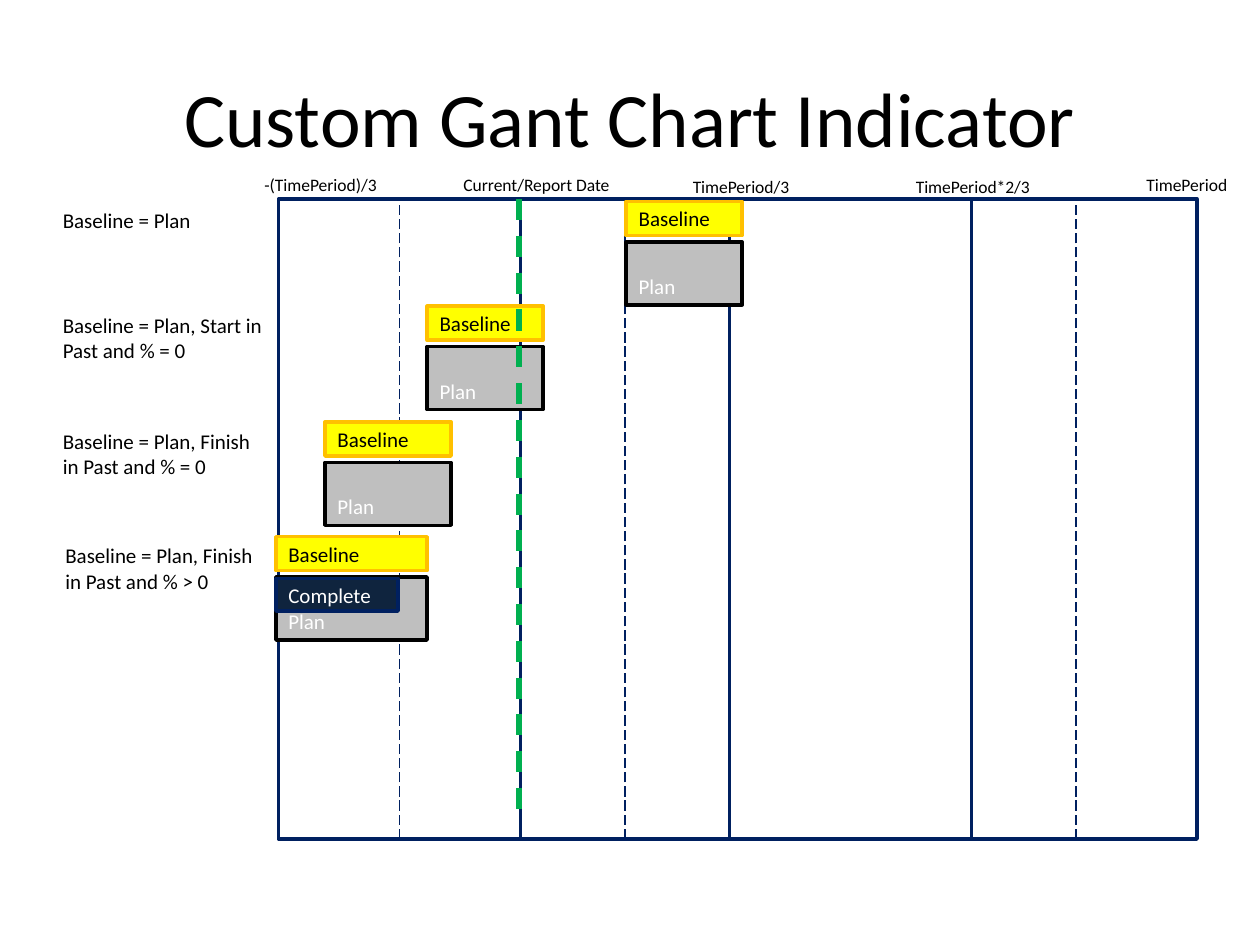
from dataclasses import dataclass
from typing import NamedTuple, Optional

from pptx import Presentation
from pptx.dml.color import RGBColor as Rgb
from pptx.enum.dml import MSO_LINE_DASH_STYLE as Dash
from pptx.enum.shapes import MSO_CONNECTOR_TYPE as Link, MSO_SHAPE as Form
from pptx.enum.text import MSO_ANCHOR as Anchor, MSO_AUTO_SIZE as Fit, PP_ALIGN as Align
from pptx.oxml.ns import qn
from pptx.util import Pt
from lxml.etree import SubElement

SCALE = 9144  # EMU in one px, 100 px to the inch


@dataclass(frozen=True)
class Theme:
    font: str = "Calibri"
    black: str = "000000"
    white: str = "FFFFFF"
    navy: str = "002060"
    dark: str = "0F243E"
    gray: str = "BFBFBF"
    yellow: str = "FFFF00"
    amber: str = "FFC000"
    green: str = "00B050"
    title: int = 44
    body: int = 12
    small: int = 10
    edge: int = 2


THEME = Theme()


class Box(NamedTuple):
    left: int
    top: int
    width: int
    height: int


class Look(NamedTuple):
    fill: str
    line: str
    ink: str = THEME.black
    anchor: Anchor = Anchor.MIDDLE


class Tick(NamedTuple):
    text: str
    left: int
    top: int
    width: int


class Task(NamedTuple):
    label: str
    side: int
    top: int
    left: int
    width: int
    done: Optional[int] = None


PANEL = Look(THEME.white, THEME.navy)
BASE = Look(THEME.yellow, THEME.amber)
PLAN = Look(THEME.gray, THEME.black, THEME.white, Anchor.BOTTOM)
DONE = Look(THEME.dark, THEME.navy, THEME.white)

GRID = Box(221, 158, 192, 508)
STEP = 179
NOW = 412

TICKS = [
    Tick("-(TimePeriod)/3", 200, 133, 117),
    Tick("Current/Report Date", 358, 133, 144),
    Tick("TimePeriod", 900, 133, 100),
    Tick("TimePeriod/3", 540, 135, 100),
    Tick("TimePeriod*2/3", 717, 135, 117),
]

TASKS = [
    Task("Baseline = Plan", 40, 160, 497, 92),
    Task("Baseline = Plan, Start in Past and % = 0", 40, 243, 339, 92),
    Task("Baseline = Plan, Finish in Past and % = 0", 40, 335, 258, 100),
    Task("Baseline = Plan, Finish in Past and % > 0", 42, 426, 219, 120, 97),
]


def px(*vals: int) -> list[int]:
    return [val * SCALE for val in vals]


def apply(item, **vals) -> None:
    for name, val in vals.items():
        setattr(item, name, val)


def write(shape, text: str, size: int, ink: str, align: Align = Align.LEFT, **frame) -> None:
    apply(shape.text_frame, word_wrap=True, **frame)
    para = shape.text_frame.paragraphs[0]
    para.alignment = align
    run = para.add_run()
    run.text = text
    apply(run.font, name=THEME.font, size=Pt(size))
    run.font.color.rgb = Rgb.from_string(ink)


def add_box(slide, box: Box, look: Look, text: str = "") -> None:
    shape = slide.shapes.add_shape(Form.RECTANGLE, *px(*box))
    shape.shadow.inherit = False
    shape.fill.solid()
    shape.fill.fore_color.rgb = Rgb.from_string(look.fill)
    shape.line.color.rgb = Rgb.from_string(look.line)
    shape.line.width = Pt(THEME.edge)
    if text:
        write(shape, text, THEME.body, look.ink, vertical_anchor=look.anchor)


def add_note(slide, box: Box, text: str, size: int) -> None:
    shape = slide.shapes.add_textbox(*px(*box))
    write(shape, text, size, THEME.black, auto_size=Fit.SHAPE_TO_FIT_TEXT)


def add_rule(slide, x: int, start: int, end: int, color: str, **style) -> None:
    """Draw an upright dashed line."""
    rule = slide.shapes.add_connector(Link.STRAIGHT, *px(x, start, x, end))
    rule.line.color.rgb = Rgb.from_string(color)
    apply(rule.line, **style)
    SubElement(rule._element.spPr, qn("a:effectLst"))


def add_grid(slide) -> None:
    """Draw the four panels; each later one overlaps its neighbours' edges."""
    for col in (3, 1, 0, 2):
        left = GRID.left + col * STEP
        add_box(slide, GRID._replace(left=left), PANEL)
        if col != 2:
            add_rule(slide, left + GRID.width // 2, GRID.top + GRID.height, GRID.top,
                     THEME.navy, width=Pt(0.75), dash_style=Dash.LONG_DASH)


def add_task(slide, task: Task) -> None:
    high = 30 if task is TASKS[0] else 50
    add_note(slide, Box(task.side, task.top, 179, high), task.label, THEME.body)
    add_box(slide, Box(task.left, task.top + 32, task.width, 50), PLAN, "Plan")
    add_box(slide, Box(task.left, task.top, task.width, 27), BASE, "Baseline")
    if task.done:
        add_box(slide, Box(task.left, task.top + 33, task.done, 26), DONE, "Complete")


def main() -> None:
    deck = Presentation()
    wide, high = px(1000, 750)
    apply(deck, slide_width=wide, slide_height=high)
    slide = deck.slides.add_slide(deck.slide_layouts[5])

    add_grid(slide)
    title = slide.shapes.title
    apply(title, **dict(zip(Box._fields, px(50, 30, 900, 125))))
    write(title, "Custom Gant Chart Indicator", THEME.title, THEME.black,
          Align.CENTER, vertical_anchor=Anchor.MIDDLE)
    for tick in TICKS:
        add_note(slide, Box(tick.left, tick.top, tick.width, 27), tick.text, THEME.small)
    for task in TASKS:
        add_task(slide, task)
    add_rule(slide, NOW, GRID.top, 650, THEME.green, width=Pt(3), dash_style=Dash.DASH)

    deck.save("out.pptx")


if __name__ == "__main__":
    main()
